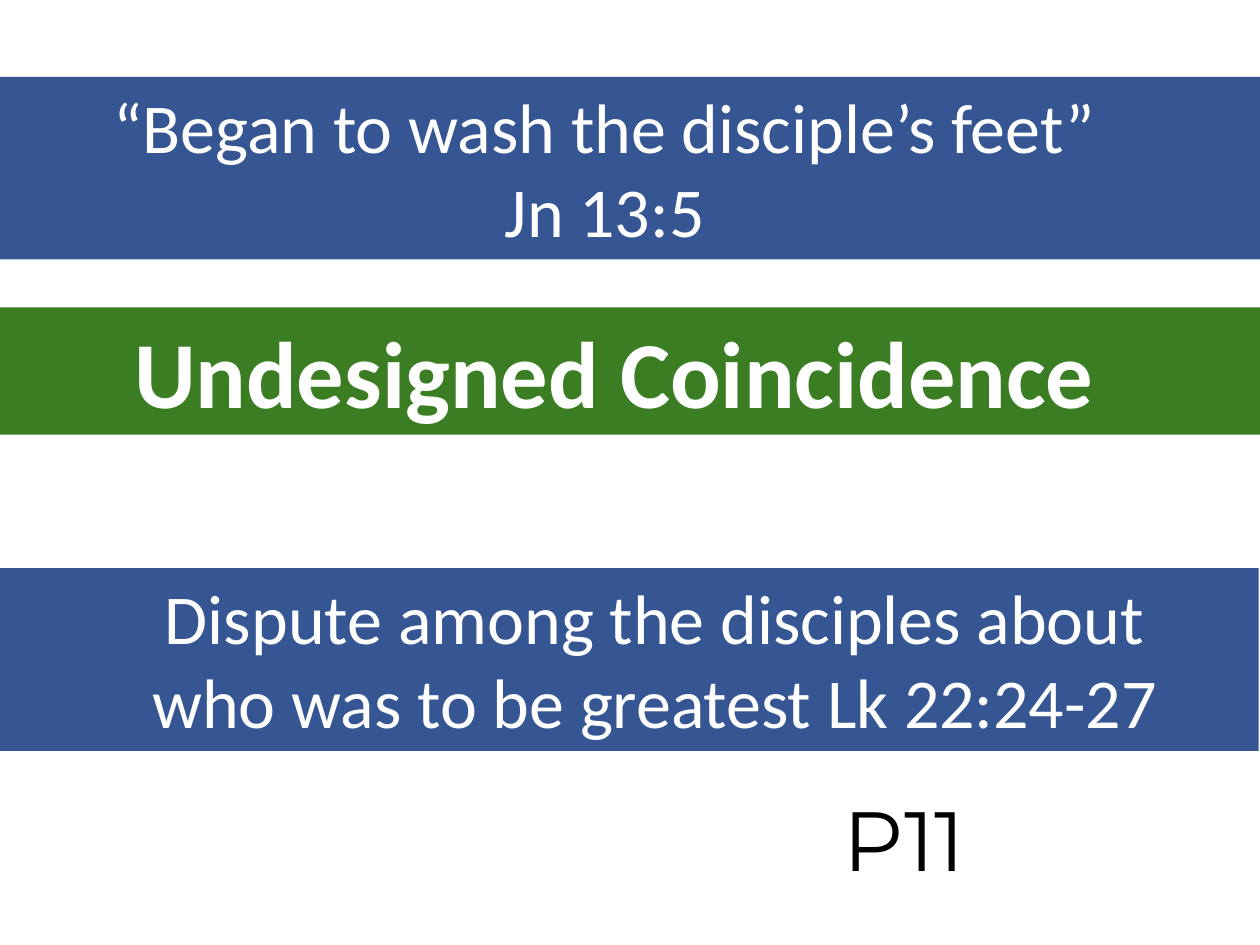
from dataclasses import dataclass

from pptx import Presentation
from pptx.dml.color import RGBColor
from pptx.enum.shapes import MSO_SHAPE
from pptx.enum.text import MSO_ANCHOR, PP_ALIGN
from pptx.util import Emu, Pt

PX = 9144  # EMU per px, 100 px to the inch
COLORS = {"blue": "365693", "green": "3B7D23", "white": "FFFFFF", "black": "000000"}


@dataclass
class Band:
    box: tuple[int, int, int, int]
    fill: str
    lines: list[str]
    size: int
    left_inset: int
    right_inset: int
    bold: bool = False


VERSE = Band((0, 61, 1000, 145), "blue",
             ["“Began to wash the disciple’s feet”", "Jn 13:5"], 40, 10, 50)
TITLE = Band((-15, 244, 1015, 101), "green", ["Undesigned Coincidence"], 54, 0, 10, True)
DISPUTE = Band((0, 451, 999, 145), "blue",
               ["Dispute among the disciples about", "who was to be greatest Lk 22:24-27"],
               40, 50, 10)


def px(n: int) -> Emu:
    return Emu(n * PX)


def color(name: str) -> RGBColor:
    return RGBColor.from_string(COLORS[name])


def write(tf, lines: list[str], align: PP_ALIGN, font_color: str, **font) -> None:
    """Fill a text frame with one paragraph per line."""
    for i, line in enumerate(lines):
        p = tf.add_paragraph() if i else tf.paragraphs[0]
        p.alignment = align
        r = p.add_run()
        r.text = line
        for name, value in font.items():
            setattr(r.font, name, value)
        r.font.color.rgb = color(font_color)


def format_band(sp, band: Band) -> None:
    """Place, fill and letter a full-width band."""
    sp.left, sp.top, sp.width, sp.height = map(px, band.box)
    sp.fill.solid()
    sp.fill.fore_color.rgb = color(band.fill)
    sp.line.fill.background()
    tf = sp.text_frame
    frame = {"word_wrap": True, "vertical_anchor": MSO_ANCHOR.TOP,
             "margin_left": px(band.left_inset), "margin_right": px(band.right_inset),
             "margin_top": px(5), "margin_bottom": px(5)}
    for name, value in frame.items():
        setattr(tf, name, value)
    write(tf, band.lines, PP_ALIGN.CENTER, "white",
          name="Calibri", size=Pt(band.size), bold=band.bold)


def add_band(s, band: Band) -> None:
    sp = s.shapes.add_shape(MSO_SHAPE.RECTANGLE, *map(px, band.box))
    sp.shadow.inherit = False
    format_band(sp, band)


def main() -> None:
    prs = Presentation()
    prs.slide_width, prs.slide_height = px(1000), px(750)
    s = prs.slides.add_slide(prs.slide_layouts[5])

    # Bands: title between the two passages
    format_band(s.shapes.title, TITLE)
    for band in (VERSE, DISPUTE):
        add_band(s, band)

    # Page mark
    mark = s.shapes.add_textbox(px(660), px(620), px(277), px(91))
    mark.text_frame.word_wrap = True
    write(mark.text_frame, ["P11"], PP_ALIGN.LEFT, "black", name="Montserrat", size=Pt(48))

    prs.save("out.pptx")


if __name__ == "__main__":
    main()
